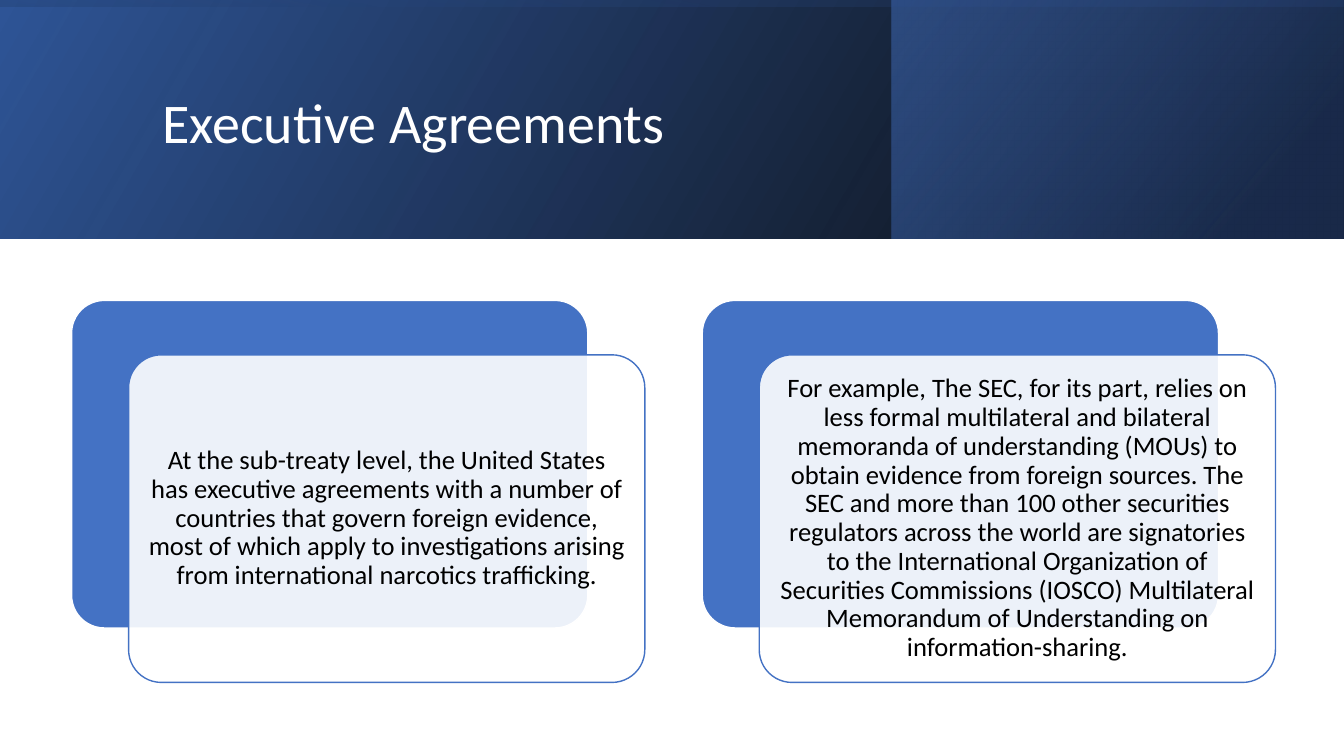
from lxml import etree
from pptx import Presentation
from pptx.dml.color import RGBColor
from pptx.enum.shapes import MSO_SHAPE as Shape
from pptx.enum.text import MSO_ANCHOR as Anchor, PP_ALIGN as Align
from pptx.oxml import parse_xml
from pptx.oxml.ns import nsdecls, qn
from pptx.util import Inches, Pt

FONT = "Calibri"
WHITE, BLACK, BLUE = "FFFFFF", "000000", "4472C4"
DEEP_BLUE, NAVY = "2F5597", "203864"

CARD_WIDTH, CARD_HEIGHT = 5.12, 3.25
CARD_LEFT, CARD_TOP, CARD_PITCH = 0.71, 2.98, 6.255
PANEL_DX, PANEL_DY = 0.565, 0.54
TEXT_MARGIN = 0.1

AGREEMENTS = [
    "At the sub-treaty level, the United States has executive agreements with "
    "a number of countries that govern foreign evidence, most of which apply "
    "to investigations arising from international narcotics trafficking.",
    "For example, The SEC, for its part, relies on less formal multilateral "
    "and bilateral memoranda of understanding (MOUs) to obtain evidence from "
    "foreign sources. The SEC and more than 100 other securities regulators "
    "across the world are signatories to the International Organization of "
    "Securities Commissions (IOSCO) Multilateral Memorandum of Understanding "
    "on information-sharing.",
]


def rgb(value):
    return RGBColor.from_string(value)


def add_plain_shape(slide, kind, left, top, width, height):
    shape = slide.shapes.add_shape(
        kind, Inches(left), Inches(top), Inches(width), Inches(height))
    shape.shadow.inherit = False
    return shape


def add_gradient_band(slide, left, top, width, height, stops, angle, rotation=0):
    """Mirrored rectangle; stops are (position %, colour, opacity %)."""
    band = add_plain_shape(slide, Shape.RECTANGLE, left, top, width, height)
    band.rotation = rotation
    band.line.fill.background()
    properties = band._element.spPr
    properties.find(qn("a:xfrm")).set("flipH", "1")
    stop_xml = "".join(
        f'<a:gs pos="{position * 1000}"><a:srgbClr val="{color}">'
        f'<a:alpha val="{opacity * 1000}"/></a:srgbClr></a:gs>'
        for position, color, opacity in stops)
    gradient = parse_xml(
        f'<a:gradFill {nsdecls("a")} rotWithShape="1"><a:gsLst>{stop_xml}</a:gsLst>'
        f'<a:lin ang="{angle * 60000}" scaled="0"/></a:gradFill>')
    properties.find(qn("a:prstGeom")).addnext(gradient)


def add_rounded_panel(slide, left, top, fill, line, opacity=100):
    panel = add_plain_shape(
        slide, Shape.ROUNDED_RECTANGLE, left, top, CARD_WIDTH, CARD_HEIGHT)
    panel.adjustments[0] = 0.1
    panel.fill.solid()
    panel.fill.fore_color.rgb = rgb(fill)
    panel.line.color.rgb = rgb(line)
    panel.line.width = Pt(1)
    if opacity < 100:
        color = panel._element.spPr.find(qn("a:solidFill")).find(qn("a:srgbClr"))
        etree.SubElement(color, qn("a:alpha")).set("val", str(opacity * 1000))


def add_text(slide, text, left, top, width, height, *, size, color,
             align=Align.LEFT, margins=(0.1, 0.05), space_after=0):
    box = slide.shapes.add_textbox(
        Inches(left), Inches(top), Inches(width), Inches(height))
    frame = box.text_frame
    frame.word_wrap = True
    frame.vertical_anchor = Anchor.MIDDLE
    frame.margin_left = frame.margin_right = Inches(margins[0])
    frame.margin_top = frame.margin_bottom = Inches(margins[1])
    paragraph = frame.paragraphs[0]
    paragraph.alignment = align
    paragraph.line_spacing = 0.9
    paragraph.space_after = Pt(space_after)
    run = paragraph.add_run()
    run.text = text
    run.font.name = FONT
    run.font.size = Pt(size)
    run.font.color.rgb = rgb(color)


def add_header(slide):
    add_gradient_band(slide, 0, 0, 13.33, 2.37,
                      [(0, BLACK, 96), (100, DEEP_BLUE, 100)], 330)
    add_gradient_band(slide, 8.84, 0, 4.48, 2.37,
                      [(19, NAVY, 68), (100, BLUE, 48)], 320)
    add_gradient_band(slide, 5.48, -5.48, 2.37, 13.33,
                      [(23, DEEP_BLUE, 16), (99, BLACK, 45)], 350, rotation=270)
    add_text(slide, "Executive Agreements", 1.51, 0.38, 10.63, 1.72,
             size=40, color=WHITE)


def add_agreement_card(slide, left, text):
    """Blue backing with an offset translucent panel that holds the text."""
    panel_left, panel_top = left + PANEL_DX, CARD_TOP + PANEL_DY
    add_rounded_panel(slide, left, CARD_TOP, BLUE, WHITE)
    add_rounded_panel(slide, panel_left, panel_top, WHITE, BLUE, opacity=90)
    add_text(slide, text, panel_left + TEXT_MARGIN, panel_top + TEXT_MARGIN,
             CARD_WIDTH - 2 * TEXT_MARGIN, CARD_HEIGHT - 2 * TEXT_MARGIN,
             size=19, color=BLACK, align=Align.CENTER,
             margins=(0.08, 0.08), space_after=6.65)


def main():
    deck = Presentation()
    deck.slide_width, deck.slide_height = Inches(13.33), Inches(7.5)
    slide = deck.slides.add_slide(deck.slide_layouts[6])
    add_header(slide)
    for column, text in enumerate(AGREEMENTS):
        add_agreement_card(slide, CARD_LEFT + column * CARD_PITCH, text)
    deck.save("out.pptx")


if __name__ == "__main__":
    main()
